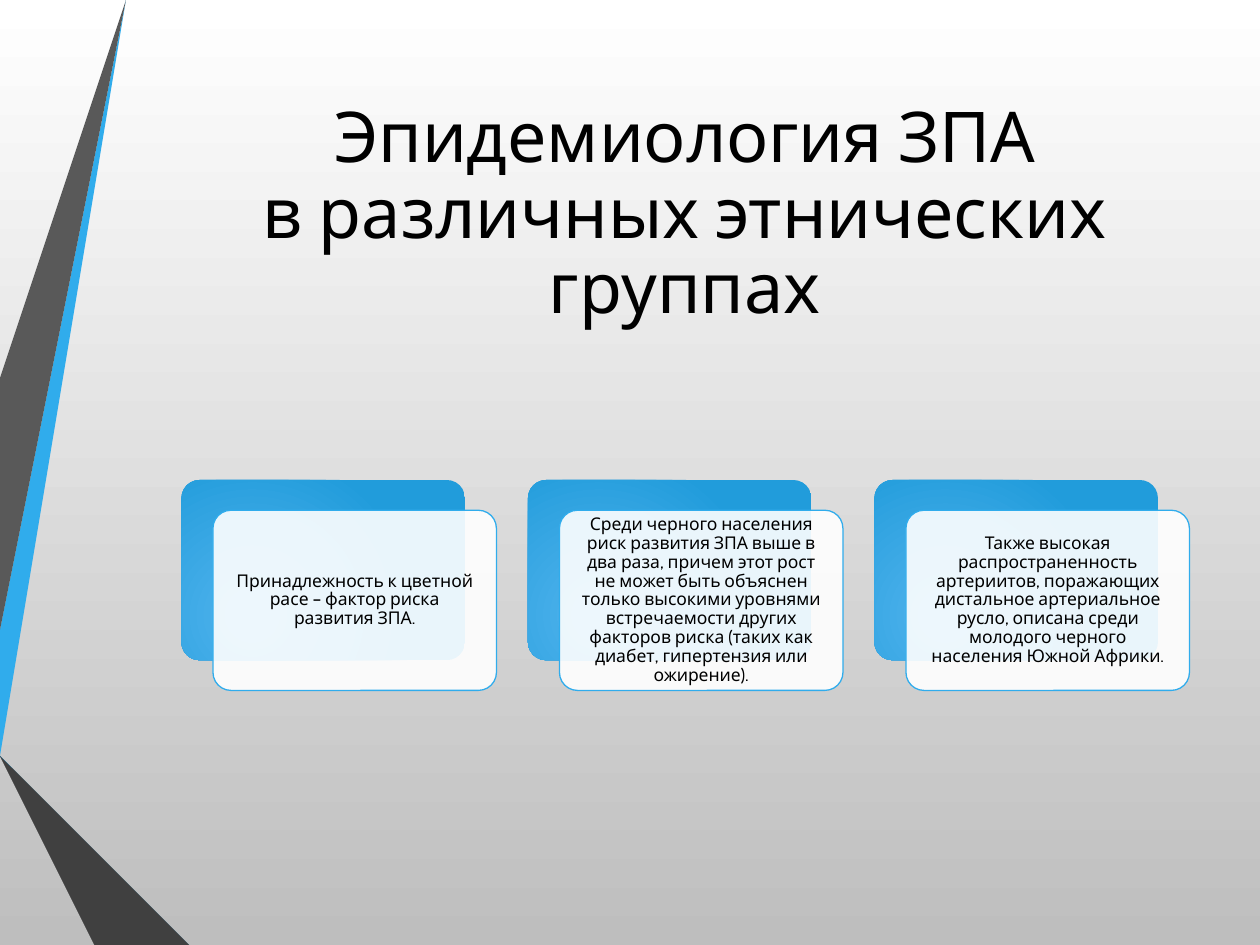
import pptx
import pptx.util
import pptx.oxml
import pptx.oxml.ns
from pptx.dml.color import RGBColor
from pptx.enum.shapes import MSO_SHAPE
from pptx.enum.text import MSO_ANCHOR, MSO_AUTO_SIZE, PP_ALIGN

TITLE = "Эпидемиология ЗПА\vв различных этнических группах"
CARDS = [
    "Принадлежность к цветной расе – фактор риска развития ЗПА.",
    "Среди черного населения риск развития ЗПА выше в два раза, причем этот рост "
    "не может быть объяснен только высокими уровнями встречаемости других факторов "
    "риска (таких как диабет, гипертензия или ожирение).",
    "Также высокая распространенность артериитов, поражающих дистальное артериальное "
    "русло, описана среди молодого черного населения Южной Африки.",
]
COLORS = {
    "white": "FFFFFF", "silver": "BEBEBE", "text": "000000",
    "sky": "30ACEC", "gray": "595959", "black": "262626",
    "navy": "0C5A82", "blue": "1287C3", "charcoal": "404040",
    "plate_light": "51B3ED", "plate_dark": "219CDB",
}
# Ribbon outlines in inches, back to front
RIBBONS = [
    ("sky", [(0, 5.44), (0, 5.75), (0.22, 5.79), (1.17, 0), (0.89, 0)]),
    ("gray", [(0.83, 0), (0.55, 0), (0, 3.36), (0, 5.06)]),
    ("black", [(0, 6.19), (0, 6.21), (0.93, 7.5), (0.99, 7.5)]),
    ("navy", [(0, 5.79), (0, 5.8), (1.56, 7.5), (1.63, 7.5)]),
    ("blue", [(0, 5.79), (1.63, 7.5), (2.33, 7.5), (0.22, 5.79), (0, 5.75)]),
    ("charcoal", [(0, 6.19), (0.99, 7.5), (1.51, 7.5), (0, 5.86)]),
]
FONT = "Cabin"
LEFT, CARD_TOP, PITCH = 1.44, 3.81, 2.75
CARD_W, CARD_H = 2.25, 1.43
OFFSET_X, OFFSET_Y = 0.25, 0.24
INSET = 0.09

inch = pptx.util.Inches


def rgb(name):
    return RGBColor.from_string(COLORS[name])


def set_gradient(fill, start, end):
    fill.gradient()
    for stop, name, position in zip(fill.gradient_stops, (start, end), (0, 1)):
        stop.color.rgb = rgb(name)
        stop.position = position


def set_text(tf, text, size):
    tf.text = text
    tf.word_wrap = True
    tf.auto_size = MSO_AUTO_SIZE.NONE
    tf.vertical_anchor = MSO_ANCHOR.MIDDLE
    p = tf.paragraphs[0]
    p.alignment = PP_ALIGN.CENTER
    p.line_spacing = 0.9
    p.font.name = FONT
    p.font.size = pptx.util.Pt(size)
    p.font.color.rgb = rgb("text")


def add_ribbon(shapes, color, points):
    builder = shapes.build_freeform(*points[0], scale=inch(1))
    builder.add_line_segments(points[1:], close=True)
    sp = builder.convert_to_shape()
    sp.shadow.inherit = False
    sp.fill.solid()
    sp.fill.fore_color.rgb = rgb(color)
    sp.line.fill.background()


def add_rounded(shapes, x, y):
    sp = shapes.add_shape(MSO_SHAPE.ROUNDED_RECTANGLE,
                          inch(x), inch(y), inch(CARD_W), inch(CARD_H))
    sp.adjustments[0] = 0.1
    sp.shadow.inherit = False
    return sp


def add_plate(shapes, x, y):
    """Add the blue backing with a radial gradient."""
    sp = add_rounded(shapes, x, y)
    set_gradient(sp.fill, "plate_light", "plate_dark")
    sp.line.fill.background()
    grad = sp._element.spPr.find(pptx.oxml.ns.qn("a:gradFill"))
    linear = grad.find(pptx.oxml.ns.qn("a:lin"))
    radial = pptx.oxml.parse_xml(
        f'<a:path {pptx.oxml.ns.nsdecls("a")} path="circle">'
        '<a:fillToRect l="50000" t="100000" r="100000" b="50000"/></a:path>')
    grad.replace(linear, radial)


def add_card(shapes, x, y, text):
    """Add the translucent white card with its text."""
    sp = add_rounded(shapes, x, y)
    sp.fill.solid()
    sp.fill.fore_color.rgb = rgb("white")
    color = sp._element.spPr.find(".//" + pptx.oxml.ns.qn("a:srgbClr"))
    color.append(pptx.oxml.parse_xml(
        f'<a:alpha {pptx.oxml.ns.nsdecls("a")} val="90000"/>'))
    sp.line.color.rgb = rgb("sky")
    sp.line.width = pptx.util.Pt(0.75)
    tf = sp.text_frame
    tf.margin_left = tf.margin_right = tf.margin_top = tf.margin_bottom = inch(INSET)
    set_text(tf, text, 10)


def main():
    prs = pptx.Presentation()
    prs.slide_width, prs.slide_height = inch(10), inch(7.5)
    s = prs.slides.add_slide(prs.slide_layouts[5])
    background = s.background.fill
    set_gradient(background, "white", "silver")
    background.gradient_angle = 270

    for color, points in RIBBONS:
        add_ribbon(s.shapes, color, points)

    title = s.shapes.title
    title.left, title.top = inch(LEFT), inch(0.75)
    title.width, title.height = inch(7.99), inch(1.92)
    set_text(title.text_frame, TITLE, 40)

    for i, text in enumerate(CARDS):
        x = LEFT + i * PITCH
        add_plate(s.shapes, x, CARD_TOP)
        add_card(s.shapes, x + OFFSET_X, CARD_TOP + OFFSET_Y, text)

    prs.save("out.pptx")


if __name__ == "__main__":
    main()
